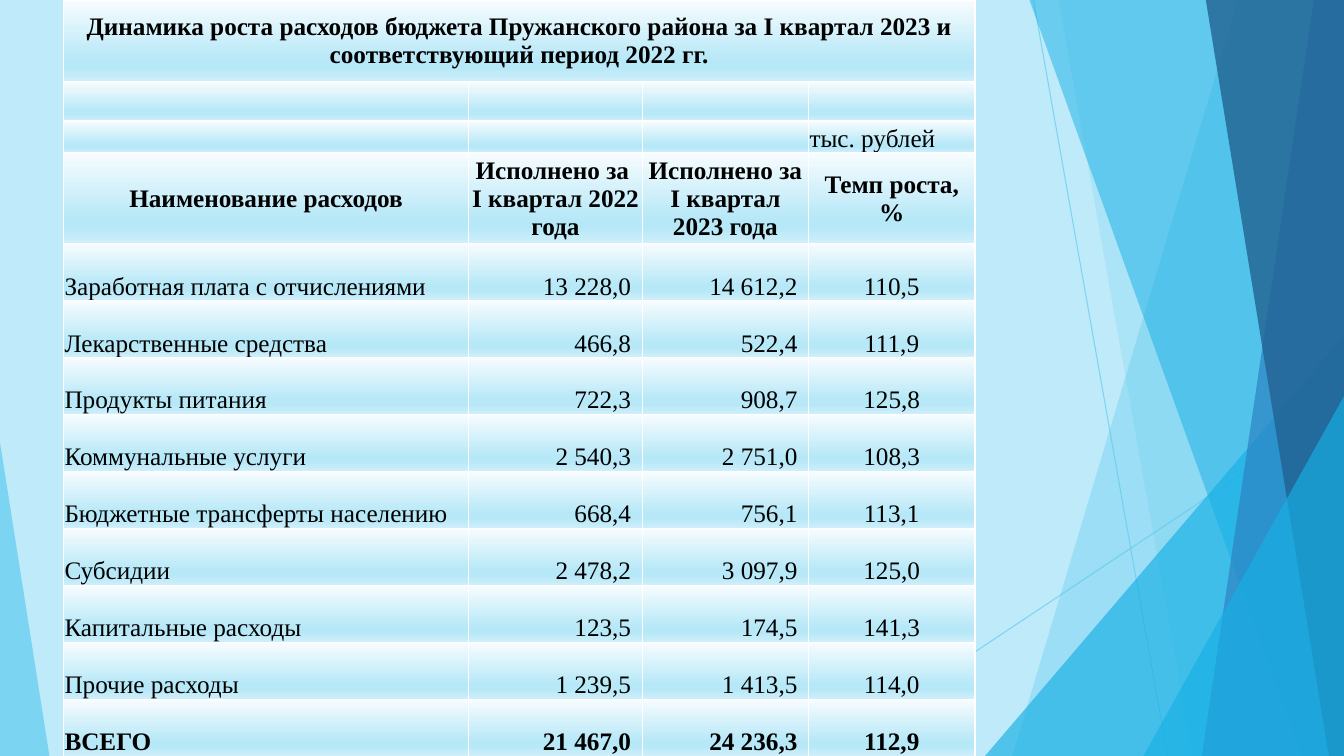
from lxml import etree
from pptx import Presentation
from pptx.dml.color import RGBColor
from pptx.enum.shapes import MSO_CONNECTOR, MSO_SHAPE
from pptx.enum.text import MSO_ANCHOR, PP_ALIGN
from pptx.oxml.ns import qn
from pptx.util import Inches, Pt

PALE = RGBColor(0xBF, 0xEA, 0xF9)
SKY = RGBColor(0x5F, 0xCB, 0xEF)
CYAN = RGBColor(0x17, 0xB0, 0xE4)
BLUE = RGBColor(0x2E, 0x83, 0xC3)
NAVY = RGBColor(0x22, 0x62, 0x92)
WHITE = RGBColor(0xFF, 0xFF, 0xFF)
BLACK = RGBColor(0, 0, 0)
CELL_STOPS = [(0, RGBColor(0xF7, 0xFC, 0xFE)), (74, RGBColor(0xB7, 0xE8, 0xF8)),
              (83, RGBColor(0xB7, 0xE8, 0xF8)), (100, RGBColor(0xCF, 0xEF, 0xFA))]
FONT = "Times New Roman"
SLIDE_W, SLIDE_H = 13.33, 7.5

TITLE = ("Динамика роста расходов бюджета Пружанского района за I квартал 2023 и "
         "соответствующий период 2022 гг.")
UNIT = "тыс. рублей"
HEADERS = ["Наименование расходов", "Исполнено за \nI квартал 2022 года",
           "Исполнено за I квартал 2023 года", "Темп роста, %"]
EXPENSES = [
    ("Заработная плата с отчислениями", "13 228,0", "14 612,2", "110,5"),
    ("Лекарственные средства", "466,8", "522,4", "111,9"),
    ("Продукты питания", "722,3", "908,7", "125,8"),
    ("Коммунальные услуги", "2 540,3", "2 751,0", "108,3"),
    ("Бюджетные трансферты населению", "668,4", "756,1", "113,1"),
    ("Субсидии", "2 478,2", "3 097,9", "125,0"),
    ("Капитальные расходы", "123,5", "174,5", "141,3"),
    ("Прочие расходы", "1 239,5", "1 413,5", "114,0"),
    ("ВСЕГО", "21 467,0", "24 236,3", "112,9"),
]
COL_WIDTHS = [4.02, 1.72, 1.65, 1.65]
HEAD_HEIGHTS = [0.81, 0.39, 0.31, 0.9]
COL_ALIGN = [PP_ALIGN.LEFT, PP_ALIGN.RIGHT, PP_ALIGN.RIGHT, PP_ALIGN.CENTER]


def add_color(parent, color, alpha=100):
    clr = etree.SubElement(parent, qn("a:srgbClr"), val=str(color))
    if alpha < 100:
        etree.SubElement(clr, qn("a:alpha"), val=str(alpha * 1000))


def set_alpha(fill_xml, color, alpha):
    for child in list(fill_xml):
        fill_xml.remove(child)
    add_color(fill_xml, color, alpha)


def paint(shape, color, alpha):
    shape.shadow.inherit = False
    shape.line.fill.background()
    shape.fill.solid()
    set_alpha(shape._element.spPr.find(qn("a:solidFill")), color, alpha)


def add_triangle(s, left, top, width, height, apex, color, alpha):
    sp = s.shapes.add_shape(MSO_SHAPE.ISOSCELES_TRIANGLE, Inches(left), Inches(top),
                            Inches(width), Inches(height))
    sp.adjustments[0] = apex
    paint(sp, color, alpha)


def add_facet(s, right, top, height, top_width, bottom_width, color, alpha):
    """Four-sided pane that fills the height and ends at the right edge."""
    points = [(right - top_width, top), (right, top), (right, top + height),
              (right - bottom_width, top + height)]
    points = [(Inches(x), Inches(y)) for x, y in points]
    builder = s.shapes.build_freeform(*points[0])
    builder.add_line_segments(points[1:], close=True)
    paint(builder.convert_to_shape(), color, alpha)


def add_thin_line(s, x1, y1, x2, y2):
    line = s.shapes.add_connector(MSO_CONNECTOR.STRAIGHT, Inches(x1), Inches(y1),
                                  Inches(x2), Inches(y2))
    line.line.width = Pt(0.75)
    line.line.color.rgb = SKY
    set_alpha(line.line._ln.find(qn("a:solidFill")), SKY, 70)
    etree.SubElement(line._element.spPr, qn("a:effectLst"))


def draw_facets(s, left, top, width, height):
    right, bottom = left + width, top + height
    add_thin_line(s, left + 2.13, top, left + 3.46, bottom)
    add_thin_line(s, right, top + 4.03, left, bottom)
    add_facet(s, right, top, height, 1.05, 3.29, SKY, 36)
    add_facet(s, right, top, height, 2.83, 1.5, SKY, 20)
    add_triangle(s, right - 3.56, bottom - 4.17, 3.56, 4.17, 1, CYAN, 66)
    add_facet(s, right, top, height, 3.12, 0.42, CYAN, 50)
    add_facet(s, right, top, height, 0.3, 1.41, BLUE, 70)
    add_facet(s, right, top, height, 1.37, 0.15, NAVY, 80)
    add_triangle(s, right - 1.99, bottom - 3.57, 1.99, 3.57, 1, CYAN, 66)


def style_cell(cell):
    """White borders and a vertical gradient."""
    cell.margin_left = cell.margin_right = cell.margin_top = Inches(0.01)
    cell.margin_bottom = 0
    tc_pr = cell._tc.get_or_add_tcPr()
    for side in ("a:lnL", "a:lnR", "a:lnT", "a:lnB"):
        ln = etree.SubElement(tc_pr, qn(side), w=str(Pt(1)))
        add_color(etree.SubElement(ln, qn("a:solidFill")), WHITE)
    grad = etree.SubElement(tc_pr, qn("a:gradFill"), rotWithShape="1")
    stops = etree.SubElement(grad, qn("a:gsLst"))
    for pos, color in CELL_STOPS:
        add_color(etree.SubElement(stops, qn("a:gs"), pos=str(pos * 1000)), color)
    etree.SubElement(grad, qn("a:lin"), ang="5400000", scaled="0")


def write_cell(cell, text, align=PP_ALIGN.CENTER, anchor=MSO_ANCHOR.MIDDLE, bold=True):
    cell.vertical_anchor = anchor
    cell.text_frame.text = text
    for p in cell.text_frame.paragraphs:
        p.alignment = align
        for r in p.runs:
            r.font.name, r.font.size, r.font.bold = FONT, Pt(18), bold
            r.font.color.rgb = BLACK
    if align == PP_ALIGN.RIGHT:
        cell.margin_right = Inches(0.11)


def draw_expense_table(s, left, top, width, height):
    first = len(HEAD_HEIGHTS)
    frame = s.shapes.add_table(first + len(EXPENSES), len(COL_WIDTHS), Inches(left),
                               Inches(top), Inches(width), Inches(height))
    table = frame.table
    table.first_row = table.horz_banding = False
    for col, share in zip(table.columns, COL_WIDTHS):
        col.width = Inches(width * share / sum(COL_WIDTHS))
    body_height = (height - sum(HEAD_HEIGHTS)) / len(EXPENSES)
    for row, h in zip(table.rows, HEAD_HEIGHTS + [body_height] * len(EXPENSES)):
        row.height = Inches(h)
    for cell in table.iter_cells():
        style_cell(cell)

    table.cell(0, 0).merge(table.cell(0, len(COL_WIDTHS) - 1))
    write_cell(table.cell(0, 0), TITLE)
    write_cell(table.cell(2, 3), UNIT, PP_ALIGN.LEFT, MSO_ANCHOR.BOTTOM, False)
    for c, header in enumerate(HEADERS):
        write_cell(table.cell(first - 1, c), header)
    for r, expense in enumerate(EXPENSES):
        is_total = r == len(EXPENSES) - 1
        for c, (text, align) in enumerate(zip(expense, COL_ALIGN)):
            write_cell(table.cell(first + r, c), text, align, MSO_ANCHOR.BOTTOM, is_total)


def main():
    prs = Presentation()
    prs.slide_width, prs.slide_height = Inches(SLIDE_W), Inches(SLIDE_H)
    s = prs.slides.add_slide(prs.slide_layouts[6])
    s.background.fill.solid()
    s.background.fill.fore_color.rgb = PALE
    draw_facets(s, 8.12, 0, SLIDE_W - 8.12, SLIDE_H)
    add_triangle(s, 0, 4.39, 0.49, 3.11, 0, SKY, 70)
    draw_expense_table(s, 0.63, 0, 9.04, SLIDE_H)
    prs.save("out.pptx")


if __name__ == "__main__":
    main()
